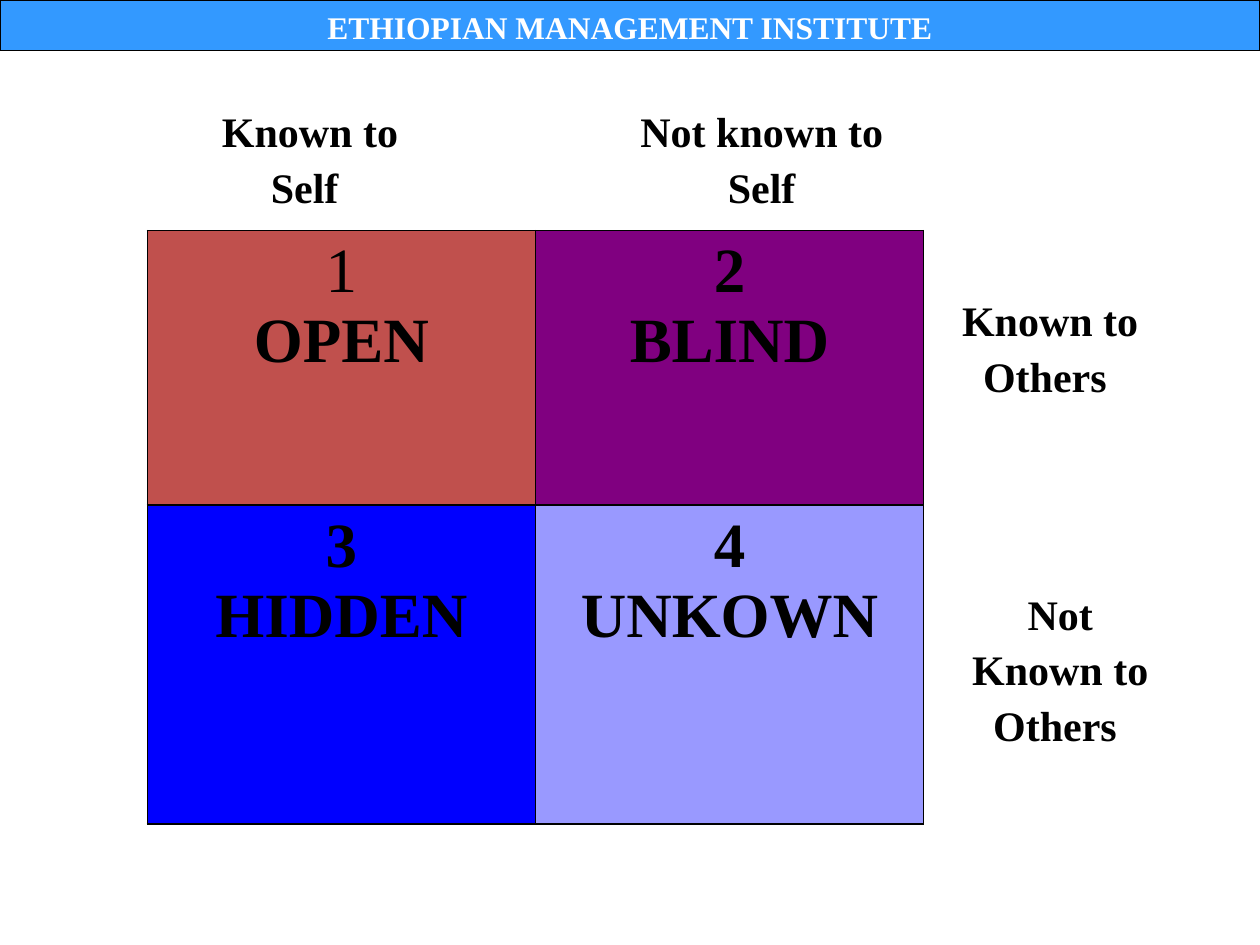
from lxml import etree
from pptx import Presentation
from pptx.dml.color import RGBColor
from pptx.enum.shapes import MSO_SHAPE
from pptx.enum.text import MSO_ANCHOR, PP_ALIGN
from pptx.oxml.ns import qn
from pptx.util import Inches, Pt

RECT = MSO_SHAPE.RECTANGLE
CENTER = PP_ALIGN.CENTER
TOP, MIDDLE = MSO_ANCHOR.TOP, MSO_ANCHOR.MIDDLE
FONT = "Times New Roman"
COLORS = {
    "black": "000000", "white": "FFFFFF", "banner": "3399FF",
    "open": "C0504D", "blind": "800080", "hidden": "0000FF", "unknown": "9999FF",
}

BANNER = "ETHIOPIAN MANAGEMENT INSTITUTE"
PANES = [  # number, name, fill, number is bold
    [("1", "OPEN", "open", False), ("2", "BLIND", "blind", True)],
    [("3", "HIDDEN", "hidden", True), ("4", "UNKOWN", "unknown", True)],
]
HEADS = [  # text, left, top, width, height
    ("Known to Self ", 1.42, 0.75, 2.08, 0.91),
    ("Not known to Self", 4.92, 0.75, 2.25, 0.91),
]
SIDES = [
    ("Known to Others ", 7.5, 2.25, 1.67, 1.25),
    ("Not Known to Others ", 7.5, 4.58, 1.83, 1.42),
]
LEFT, HIGH = 1.17, 1.83
COL_W = 3.08
ROW_H = [2.18, 2.53]


def color(name):
    return RGBColor.from_string(COLORS[name])


def style(para, size, tint="black", bold=True):
    para.alignment = CENTER
    font = para.font
    font.name, font.size, font.bold = FONT, Pt(size), bold
    font.color.rgb = color(tint)


def write(shape, text, size, tint="black", anchor=TOP):
    frame = shape.text_frame
    frame.word_wrap = True
    frame.vertical_anchor = anchor
    para = frame.paragraphs[0]
    para.text = text
    para.line_spacing = 1.1
    style(para, size, tint)


def add_rect(slide, box, fill):
    shape = slide.shapes.add_shape(RECT, *map(Inches, box))
    shape.shadow.inherit = False
    shape.fill.solid()
    shape.fill.fore_color.rgb = color(fill)
    shape.line.fill.background()
    return shape


def add_borders(cell, width=1):
    props = cell._tc.get_or_add_tcPr()
    for i, side in enumerate(("lnL", "lnR", "lnT", "lnB")):
        line = etree.Element(qn("a:" + side), w=str(Pt(width)))
        fill = etree.SubElement(line, qn("a:solidFill"))
        etree.SubElement(fill, qn("a:srgbClr"), val=COLORS["black"])
        props.insert(i, line)


def add_window(slide):
    """Add the two-by-two table of panes."""
    size = map(Inches, (LEFT, HIGH, 2 * COL_W, sum(ROW_H)))
    table = slide.shapes.add_table(2, 2, *size).table
    table.first_row = table.horz_banding = False
    for col in table.columns:
        col.width = Inches(COL_W)
    for r, row in enumerate(PANES):
        table.rows[r].height = Inches(ROW_H[r])
        for c, (number, name, fill, bold) in enumerate(row):
            cell = table.cell(r, c)
            cell.fill.solid()
            cell.fill.fore_color.rgb = color(fill)
            add_borders(cell)
            cell.text = f"{number}\n{name}"
            for para, heavy in zip(cell.text_frame.paragraphs, (bold, True)):
                style(para, 36, bold=heavy)


def main():
    deck = Presentation()
    deck.slide_width, deck.slide_height = Inches(10), Inches(7.5)
    slide = deck.slides.add_slide(deck.slide_layouts[6])

    banner = add_rect(slide, (0, 0, 10, 0.4), "banner")
    banner.line.color.rgb = color("black")
    banner.line.width = Pt(0.75)
    write(banner, BANNER, 18, "white", MIDDLE)

    add_window(slide)
    for text, *box in HEADS:
        write(slide.shapes.add_textbox(*map(Inches, box)), text, 24)
    for text, *box in SIDES:
        write(add_rect(slide, box, "white"), text, 24)
    deck.save("out.pptx")


if __name__ == "__main__":
    main()
